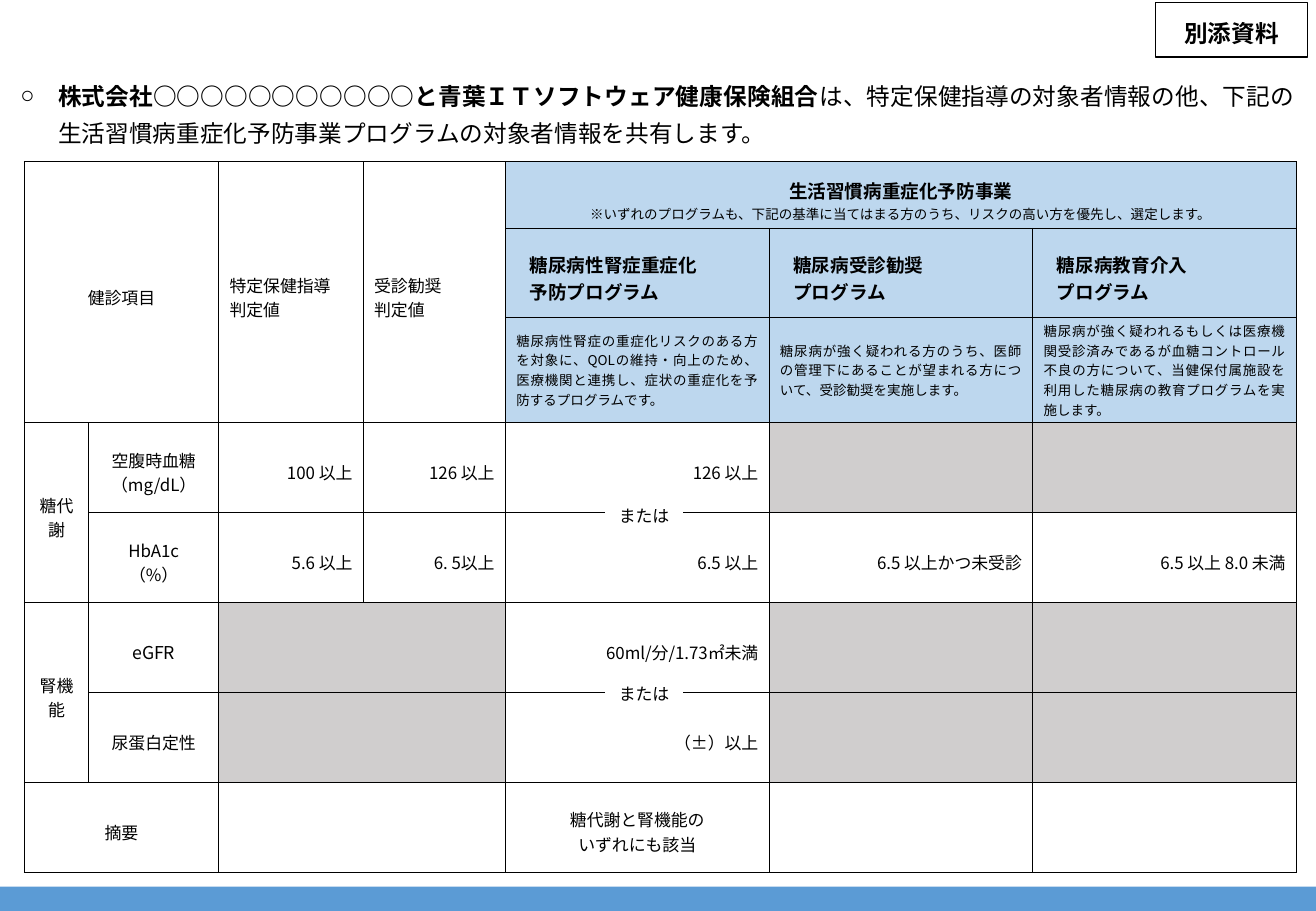
from pptx import Presentation
from pptx.dml.color import RGBColor
from pptx.enum.lang import MSO_LANGUAGE_ID
from pptx.enum.shapes import MSO_SHAPE
from pptx.enum.text import MSO_ANCHOR, MSO_AUTO_SIZE, PP_ALIGN
from pptx.oxml import parse_xml
from pptx.oxml.ns import nsdecls, qn
from pptx.util import Pt
from lxml.etree import SubElement

PX = 9144  # 100 px to the inch
FONT = "Noto Sans CJK JP"
HUES = {"ink": "000000", "paper": "FFFFFF", "bar": "5B9BD5",
        "head": "BDD7EE", "gray": "D0CECE"}
MID, RIGHT, FULL = PP_ALIGN.CENTER, PP_ALIGN.RIGHT, PP_ALIGN.JUSTIFY

COLS = [53, 107, 119, 117] + [217] * 3
ROWS = [55, 73, 87] + [74] * 5

# Cell kinds: alignment, (size, bold) of each paragraph, fill, side and top inset
KINDS = {
    "item": (MID, [(10, False)], None, 9, 8),
    "tall": (MID, [(10, False)], None, 9, 8),
    "unit": (MID, [(10.5, False)], None, 9, 8),
    "limit": (FULL, [(10, False)], None, 9, 8),
    "value": (RIGHT, [(10, False)], None, 9, 8),
    "top": (MID, [(11, True), (8, False)], "head", 9, 8),
    "name": (FULL, [(11, True)], "head", 20, 8),
    "about": (FULL, [(8, False)], "head", 9, 0),
    "gray": (MID, [(10, False)], "gray", 9, 8),
}

# Row, column, kind, text
CELLS = [
    (0, 0, "item", "健診項目"),
    (0, 2, "limit", "特定保健指導\n判定値"),
    (0, 3, "limit", "受診勧奨\n判定値"),
    (0, 4, "top", "生活習慣病重症化予防事業\n※いずれのプログラムも、下記の基準に当てはまる方のうち、"
                  "リスクの高い方を優先し、選定します。"),
    (1, 4, "name", "糖尿病性腎症重症化\n予防プログラム"),
    (1, 5, "name", "糖尿病受診勧奨\nプログラム"),
    (1, 6, "name", "糖尿病教育介入\nプログラム"),
    (2, 4, "about", "糖尿病性腎症の重症化リスクのある方を対象に、QOLの維持・向上のため、"
                    "医療機関と連携し、症状の重症化を予防するプログラムです。"),
    (2, 5, "about", "糖尿病が強く疑われる方のうち、医師の管理下にあることが望まれる方について、"
                    "受診勧奨を実施します。"),
    (2, 6, "about", "糖尿病が強く疑われるもしくは医療機関受診済みであるが血糖コントロール不良の方に"
                    "ついて、当健保付属施設を利用した糖尿病の教育プログラムを実施します。"),
    (3, 0, "tall", "糖代謝"),
    (3, 1, "item", "空腹時血糖\n（mg/dL）"),
    (3, 2, "value", "100 以上"),
    (3, 3, "value", "126 以上"),
    (3, 4, "value", "126 以上"),
    (4, 1, "item", "HbA1c\n（%）"),
    (4, 2, "value", "5.6 以上"),
    (4, 3, "value", "6. 5以上"),
    (4, 4, "value", "6.5 以上"),
    (4, 5, "value", "6.5 以上かつ未受診"),
    (4, 6, "value", "6.5 以上 8.0 未満"),
    (5, 0, "tall", "腎機能"),
    (5, 1, "unit", "eGFR"),
    (5, 4, "value", "60ml/分/1.73㎡未満"),
    (6, 1, "item", "尿蛋白定性"),
    (6, 4, "value", "（±）以上"),
    (7, 0, "item", "摘要"),
    (7, 4, "item", "糖代謝と腎機能の\nいずれにも該当"),
]
CELLS += [(r, c, "gray", "") for r, c in
          [(3, 5), (3, 6), (5, 2), (5, 5), (5, 6), (6, 2), (6, 5), (6, 6)]]

# Merged areas: first and last cell
SPANS = [(0, 0, 2, 1), (0, 2, 2, 2), (0, 3, 2, 3), (0, 4, 0, 6),
         (3, 0, 4, 0), (5, 0, 6, 0), (5, 2, 5, 3), (6, 2, 6, 3),
         (7, 0, 7, 1), (7, 2, 7, 3)]


def hue(key):
    return RGBColor.from_string(HUES[key])


def scale(box):
    return [n * PX for n in box]


def style(run, size, bold=False):
    font = run.font
    font.size, font.bold, font.name = Pt(size), bold, FONT
    font.color.rgb = hue("ink")
    font.language_id = MSO_LANGUAGE_ID.JAPANESE
    SubElement(font._element, qn("a:ea")).set("typeface", FONT)


def inset(part, left, top, right, base):
    part.margin_left, part.margin_top = left * PX, top * PX
    part.margin_right, part.margin_bottom = right * PX, base * PX


def block(slide, box, fill=None, line=None):
    shape = slide.shapes.add_shape(MSO_SHAPE.RECTANGLE, *scale(box))
    shape.shadow.inherit = False
    if fill:
        shape.fill.solid()
        shape.fill.fore_color.rgb = hue(fill)
    else:
        shape.fill.background()
    if line:
        shape.line.color.rgb, shape.line.width = hue("ink"), Pt(line)
    else:
        shape.line.fill.background()
    return shape


def label(shape, text, size, bold=False):
    frame = shape.text_frame
    frame.text = text
    para = frame.paragraphs[0]
    para.alignment = MID
    style(para.runs[0], size, bold)
    return frame


def intro(slide, box):
    frame = slide.shapes.add_textbox(*scale(box)).text_frame
    frame.word_wrap = True
    frame.auto_size = MSO_AUTO_SIZE.SHAPE_TO_FIT_TEXT
    para = frame.paragraphs[0]
    props = para._p.get_or_add_pPr()
    props.set("marL", str(31 * PX))
    props.set("indent", str(-31 * PX))
    SubElement(props, qn("a:buFont")).set("typeface", "Arial")
    SubElement(props, qn("a:buChar")).set("char", "○")
    para.alignment, para.line_spacing = FULL, Pt(22)
    for text, bold in [
            ("株式会社○○○○○○○○○○○と青葉ＩＴソフトウェア健康保険組合", True),
            ("は、特定保健指導の対象者情報の他、下記の生活習慣病重症化予防事業"
             "プログラムの対象者情報を共有します。", False)]:
        run = para.add_run()
        run.text = text
        style(run, 14, bold)


def frame_cell(cell):
    props = cell._tc.get_or_add_tcPr()
    for side in "LRTB":
        props.append(parse_xml(
            f'<a:ln{side} {nsdecls("a")} w="6350"><a:solidFill>'
            f'<a:srgbClr val="{HUES["ink"]}"/></a:solidFill></a:ln{side}>'))
    cell.fill.background()


def fill_cell(cell, kind, text):
    align, looks, fill, side, top = KINDS[kind]
    cell.vertical_anchor = MSO_ANCHOR.MIDDLE
    inset(cell, side, top, side, 0)
    if fill:
        cell.fill.solid()
        cell.fill.fore_color.rgb = hue(fill)
    if kind == "tall":
        cell._tc.get_or_add_tcPr().set("vert", "eaVert")
    cell.text_frame.text = text
    for i, para in enumerate(cell.text_frame.paragraphs):
        para.alignment = align
        for run in para.runs:
            style(run, *looks[min(i, len(looks) - 1)])


def chart_grid(slide, left, top):
    box = (left, top, sum(COLS), sum(ROWS))
    table = slide.shapes.add_table(len(ROWS), len(COLS), *scale(box)).table
    table.first_row = table.horz_banding = False
    for col, wide in zip(table.columns, COLS):
        col.width = wide * PX
    for row, high in zip(table.rows, ROWS):
        row.height = high * PX
    for cell in table.iter_cells():
        frame_cell(cell)
    for r, c, end, last in SPANS:
        table.cell(r, c).merge(table.cell(end, last))
    for r, c, kind, text in CELLS:
        fill_cell(table.cell(r, c), kind, text)


def stamp(slide, box):
    frame = label(block(slide, box, line=0.75), "別添資料", 14, True)
    inset(frame, 10, 8, 10, 0)
    frame.vertical_anchor = MSO_ANCHOR.MIDDLE
    frame.paragraphs[0].line_spacing = 0.9


def joint(slide, box):
    frame = label(block(slide, box, "paper"), "または", 10)
    inset(frame, 10, 5, 10, 2)
    frame.vertical_anchor = MSO_ANCHOR.TOP
    frame.auto_size = MSO_AUTO_SIZE.SHAPE_TO_FIT_TEXT


def main():
    deck = Presentation()
    deck.slide_width, deck.slide_height = 1083 * PX, 750 * PX
    slide = deck.slides.add_slide(deck.slide_layouts[6])
    block(slide, (0, 730, 1083, 20), "bar")  # footer bar
    chart_grid(slide, 20, 133)
    intro(slide, (7, 55, 1068, 72))
    stamp(slide, (951, 2, 125, 45))
    for top in (411, 558):  # "or" between paired rows
        joint(slide, (498, top, 64, 24))
    deck.save("out.pptx")


if __name__ == "__main__":
    main()
